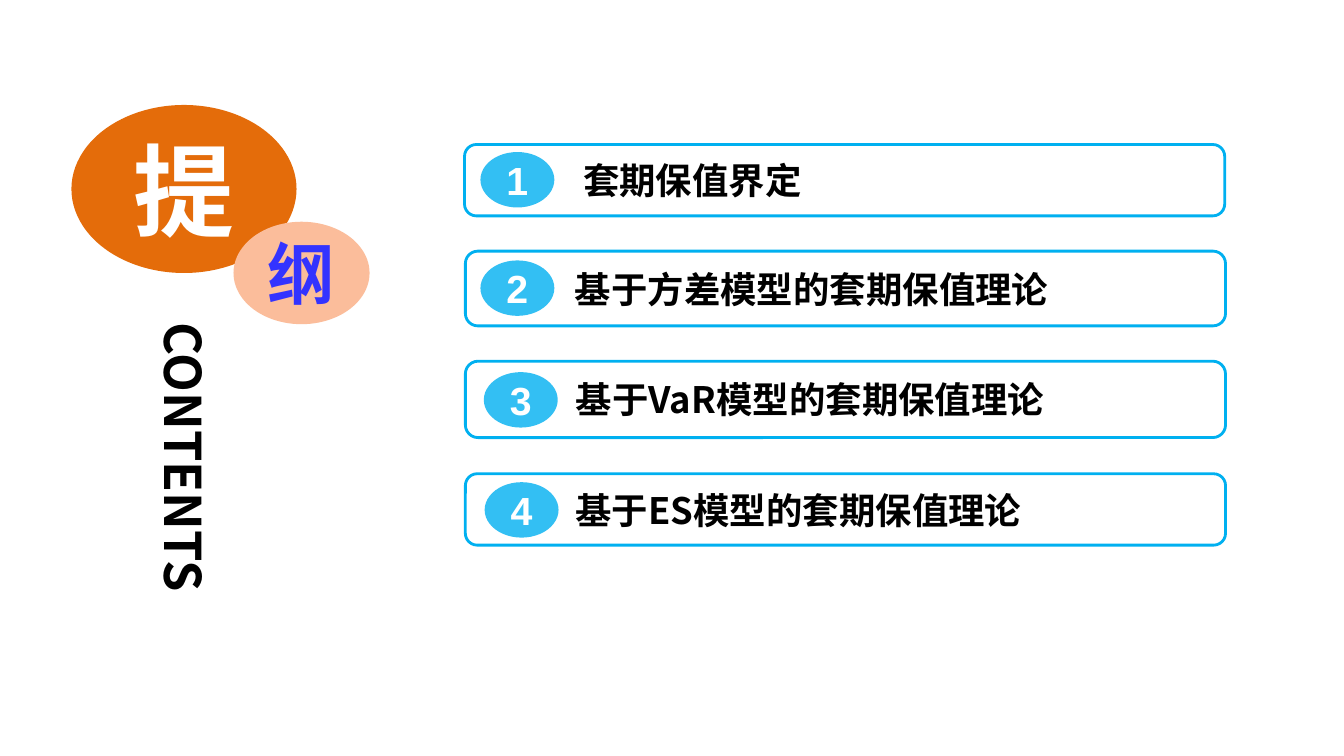
"""Builds the outline slide: a two-part title emblem beside four numbered topics."""
from dataclasses import dataclass

import pptx
import pptx.dml.color
import pptx.enum.shapes
import pptx.enum.text
import pptx.oxml
import pptx.oxml.ns
import pptx.util

SHAPE = pptx.enum.shapes.MSO_SHAPE
ALIGN = pptx.enum.text.PP_ALIGN
SLIDE_WIDTH = pptx.util.Inches(13.33)
SLIDE_HEIGHT = pptx.util.Inches(7.5)
COLUMN = SLIDE_WIDTH / 160
ROW = SLIDE_HEIGHT / 90


@dataclass(frozen=True)
class Theme:
    """Colours, fonts and type sizes of the slide."""
    white: str = "FFFFFF"
    ink: str = "000000"
    sky: str = "00B0F0"
    orange: str = "E46C0A"
    peach: str = "FBBD9B"
    blue: str = "3333FF"
    body_font: str = "Noto Sans CJK SC"
    number_font: str = "Arial"
    emblem_size: int = 72
    emblem_small_size: int = 48
    contents_size: int = 36
    number_size: int = 28
    topic_size: int = 26
    outline: int = 2
    badge_opacity: int = 80


THEME = Theme()

# topic, bar (left, top, height), badge (left, top), text inset; in columns and rows
TOPICS = [
    ("套期保值界定", (55.3, 17.2, 8.5), (57.2, 18.1), 13.7),
    ("基于方差模型的套期保值理论", (55.4, 29.9, 8.9), (57.2, 31), 12.6),
    ("基于VaR模型的套期保值理论", (55.4, 43, 9.1), (57.6, 44.3), 12.7),
    ("基于ES模型的套期保值理论", (55.4, 56.4, 8.5), (57.7, 57.4), 12.7),
]
BAR_WIDTH = 90.5
BADGE_WIDTH, BADGE_HEIGHT = 8.8, 6.6


def rgb(colour):
    """Return the colour object for a hex string."""
    return pptx.dml.color.RGBColor.from_string(colour)


def place(left, top, width, height):
    """Turn grid columns and rows into slide lengths."""
    return (round(left * COLUMN), round(top * ROW),
            round(width * COLUMN), round(height * ROW))


def write(holder, text, size, colour, font_name=THEME.body_font,
          align=ALIGN.CENTER, inset=0):
    """Write one bold, vertically centred line into a shape."""
    frame = holder.text_frame
    frame.word_wrap = True
    frame.vertical_anchor = pptx.enum.text.MSO_ANCHOR.MIDDLE
    frame.margin_left = round(inset * COLUMN)
    frame.margin_right = frame.margin_top = frame.margin_bottom = 0
    paragraph = frame.paragraphs[0]
    paragraph.text = text
    paragraph.alignment = align
    font = paragraph.font
    font.name, font.size, font.bold = font_name, pptx.util.Pt(size), True
    font.color.rgb = rgb(colour)
    properties = paragraph._p.pPr.find(pptx.oxml.ns.qn("a:defRPr"))
    east_asian = pptx.oxml.parse_xml(
        f'<a:ea {pptx.oxml.ns.nsdecls("a")} typeface="{font_name}"/>')
    properties.append(east_asian)


def add_panel(slide, preset, area, fill, outline=None):
    """Add a flat filled shape, outlined only when a colour is given."""
    panel = slide.shapes.add_shape(preset, *place(*area))
    panel.shadow.inherit = False
    panel.fill.solid()
    panel.fill.fore_color.rgb = rgb(fill)
    if outline:
        panel.line.color.rgb = rgb(outline)
        panel.line.width = pptx.util.Pt(THEME.outline)
    else:
        panel.line.fill.background()
    return panel


def fade(panel, opacity):
    """Set the opacity of a solid fill, in percent."""
    colour = panel._element.spPr.find(
        f'{pptx.oxml.ns.qn("a:solidFill")}/{pptx.oxml.ns.qn("a:srgbClr")}')
    colour.append(pptx.oxml.parse_xml(
        f'<a:alpha {pptx.oxml.ns.nsdecls("a")} val="{opacity * 1000}"/>'))


def add_topic(slide, number, topic, bar_place, badge_place, inset):
    """Add one outlined topic bar with its numbered badge."""
    left, top, height = bar_place
    bar = add_panel(slide, SHAPE.ROUNDED_RECTANGLE,
                    (left, top, BAR_WIDTH, height), THEME.white, THEME.sky)
    write(bar, topic, THEME.topic_size, THEME.ink, align=ALIGN.LEFT, inset=inset)
    badge = add_panel(slide, SHAPE.OVAL,
                      (*badge_place, BADGE_WIDTH, BADGE_HEIGHT), THEME.sky)
    fade(badge, THEME.badge_opacity)
    write(badge, str(number), THEME.number_size, THEME.white, THEME.number_font)


def add_emblem(slide, character, area, fill, size, colour):
    """Add an oval holding one character of the heading."""
    write(add_panel(slide, SHAPE.OVAL, area, fill), character, size, colour)


def add_vertical_label(slide, text, area):
    """Add a label that reads from top to bottom."""
    label = slide.shapes.add_textbox(*place(*area))
    write(label, text, THEME.contents_size, THEME.ink, align=ALIGN.LEFT)
    label.text_frame._txBody.bodyPr.set("vert", "eaVert")


def main():
    """Build the slide and save it."""
    deck = pptx.Presentation()
    deck.slide_width, deck.slide_height = SLIDE_WIDTH, SLIDE_HEIGHT
    slide = deck.slides.add_slide(deck.slide_layouts.get_by_name("Blank"))
    for number, topic in enumerate(TOPICS, start=1):
        add_topic(slide, number, *topic)
    add_emblem(slide, "提", (8.5, 12.5, 26.8, 20), THEME.orange,
               THEME.emblem_size, THEME.white)
    add_emblem(slide, "纲", (27.8, 26.4, 16.2, 12.2), THEME.peach,
               THEME.emblem_small_size, THEME.blue)
    add_vertical_label(slide, "CONTENTS", (16.6, 38.4, 10.7, 36))
    deck.save("out.pptx")


if __name__ == "__main__":
    main()
